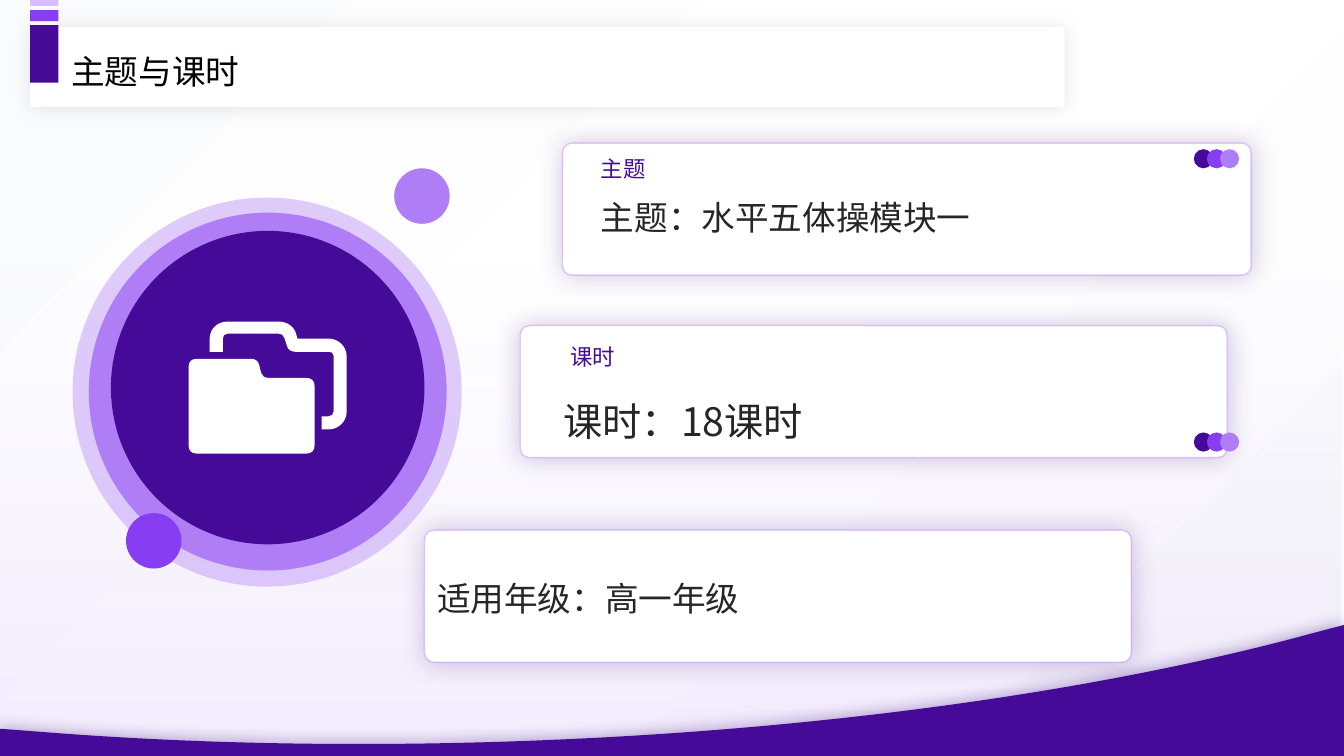
from dataclasses import dataclass
from math import cos, radians, sin
from lxml.etree import SubElement
from pptx import Presentation
from pptx.dml.color import RGBColor
from pptx.enum.shapes import MSO_SHAPE
from pptx.enum.text import MSO_ANCHOR, PP_ALIGN
from pptx.oxml.ns import qn
from pptx.util import Pt

PX = 9144  # 100 px to the inch
WIDE, HIGH = 1333, 750


@dataclass(frozen=True)
class Theme:
    deep: str = "450B98"
    vivid: str = "873DF1"
    soft: str = "AF7EF6"
    pale: str = "D7BEFA"
    shade: str = "340872"
    white: str = "FFFFFF"
    mist: str = "FAFBFC"
    black: str = "000000"
    ink: str = "262626"
    font: str = "Noto Sans CJK SC"
    label: int = 16
    body: int = 24
    large: int = 28


T = Theme()

# Outlines: a pair is a line to a point, six numbers are a curve
WAVE = [(1333, 0), (1333, 130), (0, 130), (0, 103), (52, 107),
        (222, 120, 412, 122, 609, 111), (876, 96, 1115, 59, 1299, 9)]
FRONT = [(8, 0), (62, 0), (66, 0, 69, 2, 70, 6), (72, 14),
         (73, 17, 75, 19, 80, 19), (117, 19), (122, 19, 125, 22, 125, 27),
         (125, 86), (125, 91, 122, 94, 117, 94), (8, 94),
         (3, 94, 0, 91, 0, 86), (0, 8), (0, 3, 3, 0, 8, 0)]
BACK = [(0, 30), (0, 17), (0, 7, 8, 0, 18, 0), (68, 0),
        (77, 0, 84, 5, 86, 13), (87, 17), (118, 17),
        (128, 17, 136, 25, 136, 35), (136, 89),
        (136, 99, 128, 107, 118, 107), (111, 107), (111, 94), (118, 94),
        (121, 94, 123, 92, 123, 89), (123, 34), (123, 31, 121, 30, 118, 30),
        (85, 30), (81, 30, 78, 28, 77, 25), (74, 16),
        (73, 13, 71, 12, 68, 12), (18, 12), (15, 12, 13, 14, 13, 17), (13, 30)]


def paint(shape, color, alpha=100):
    shape.shadow.inherit = False
    shape.line.fill.background()
    shape.fill.solid()
    shape.fill.fore_color.rgb = RGBColor.from_string(color)
    if alpha < 100:
        tint = shape.element.xpath("./p:spPr/a:solidFill/a:srgbClr")[0]
        SubElement(tint, qn("a:alpha"), val=str(alpha * 1000))


def blend(fill, root, stops, angle):
    fill.gradient()
    fill.gradient_angle = 360 - angle
    group = root.xpath(".//a:gsLst")[0]
    for old in list(group):
        group.remove(old)
    for pos, color, alpha in stops:
        stop = SubElement(group, qn("a:gs"), pos=str(pos * 1000))
        tint = SubElement(stop, qn("a:srgbClr"), val=color)
        SubElement(tint, qn("a:alpha"), val=str(alpha * 1000))


def glow(shape, color, alpha, blur, dist=0, angle=0):
    effects = shape.element.xpath("./p:spPr/a:effectLst")[0]
    outer = SubElement(effects, qn("a:outerShdw"), blurRad=str(Pt(blur)),
                       dist=str(Pt(dist)), dir=str(angle * 60000),
                       algn="ctr", rotWithShape="0")
    tint = SubElement(outer, qn("a:srgbClr"), val=color)
    SubElement(tint, qn("a:alpha"), val=str(alpha * 1000))


def block(slide, kind, box, color, alpha=100):
    shape = slide.shapes.add_shape(kind, *(n * PX for n in box))
    paint(shape, color, alpha)
    return shape


def disc(slide, x, y, size, color, alpha=100):
    block(slide, MSO_SHAPE.OVAL, (x, y, size, size), color, alpha)


def trace(slide, x, y, path, color, turn=0, hub=(0, 0)):
    c, s = cos(radians(turn)), sin(radians(turn))

    def spot(px, py):
        dx, dy = px - hub[0], py - hub[1]
        return (round((x + hub[0] + c * dx + s * dy) * PX),
                round((y + hub[1] + c * dy - s * dx) * PX))

    steps = [[spot(*step[i:i + 2]) for i in range(0, len(step), 2)] for step in path]
    pen = slide.shapes.build_freeform(*steps[0][0], scale=1)
    pen.add_line_segments([step[-1] for step in steps[1:]], close=True)
    shape = pen.convert_to_shape()
    # Turn the marked lines into curves
    lines = shape.element.xpath(".//a:path/a:lnTo")
    for line, step in zip(lines, steps[1:]):
        if len(step) == 3:
            curve = line.getparent().makeelement(qn("a:cubicBezTo"), {})
            for px, py in step:
                SubElement(curve, qn("a:pt"), x=str(px - shape.left),
                           y=str(py - shape.top))
            line.getparent().replace(line, curve)
    shape.rotation = turn
    paint(shape, color)
    return shape


def write(shape, text, size, color, space, anchor=MSO_ANCHOR.TOP):
    frame = shape.text_frame
    frame.word_wrap = True
    frame.vertical_anchor = anchor
    line = frame.paragraphs[0]
    line.text = text
    line.alignment = PP_ALIGN.LEFT
    line.line_spacing = space
    line.font.size = Pt(size)
    line.font.color.rgb = RGBColor.from_string(color)
    line.font.name = T.font
    SubElement(shape.element.xpath(".//a:defRPr")[0], qn("a:ea"), typeface=T.font)


def note(slide, box, text, size, color, space, anchor=MSO_ANCHOR.TOP, inset=True):
    shape = slide.shapes.add_textbox(*(n * PX for n in box))
    write(shape, text, size, color, space, anchor)
    if not inset:
        frame = shape.text_frame
        frame.margin_left = frame.margin_right = 0
        frame.margin_top = frame.margin_bottom = 0


def backdrop(slide, x, y, w, h):
    blend(slide.background.fill, slide.element,
          [(0, T.mist, 100), (50, T.white, 100), (97, T.mist, 100)], 45)
    veil = block(slide, MSO_SHAPE.RECTANGLE, (x - 2, y, w, h), T.white)
    blend(veil.fill, veil.element, [(35, T.pale, 0), (100, T.soft, 15)], 90)
    wave = trace(slide, x, y + h - 130, WAVE, T.deep, 3.7, (670, 65))
    glow(wave, T.shade, 40, 12, 2, 225)


def emblem(slide, x, y, size):
    # Rings
    disc(slide, x, y, size, T.soft, 39)
    disc(slide, x + 16, y + 15, size - 31, T.soft)
    disc(slide, x + 38, y + 33, size - 75, T.deep)
    # Folders
    trace(slide, x + 115, y + 160, FRONT, T.white)
    trace(slide, x + 136, y + 123, BACK, T.white)
    # Satellites
    disc(slide, x + 319, y - 29, 55, T.soft)
    disc(slide, x + 53, y + 313, 55, T.vivid)


def card(slide, x, y, w, h):
    shape = block(slide, MSO_SHAPE.ROUNDED_RECTANGLE, (x, y, w, h), T.white)
    shape.adjustments[0] = 0.07
    shape.line.color.rgb = RGBColor.from_string(T.soft)
    shape.line.width = Pt(1)
    line = shape.element.xpath("./p:spPr/a:ln//a:srgbClr")[0]
    SubElement(line, qn("a:alpha"), val="40000")
    glow(shape, T.shade, 24, 19)
    return shape


def topic(slide, box, title, label, text, body, size, dots):
    x, y, w, h = box
    card(slide, *box)
    note(slide, (x + body[0], y + body[1], *body[2:]), text, size, T.ink, 1.5,
         inset=False)
    note(slide, (x + label[0], y + label[1], 589, 32), title, T.label, T.deep,
         1.3, MSO_ANCHOR.MIDDLE, False)
    for i, color in enumerate((T.deep, T.vivid, T.soft)):
        disc(slide, x + dots[0] + 13 * i, y + dots[1], 19, color)


def header(slide, x, y, w, h):
    bar = block(slide, MSO_SHAPE.RECTANGLE, (x, y, w, h), T.white)
    glow(bar, T.black, 10, 13)
    note(slide, (x + 31, y + 15, 882, 50), "主题与课时", T.body, T.black, 1.1)
    # Ribbon
    for top, tall, color in ((-2, 57, T.deep), (-17, 11, T.vivid), (-27, 6, T.pale)):
        block(slide, MSO_SHAPE.RECTANGLE, (x, y + top, 28, tall), color)


def main():
    deck = Presentation()
    deck.slide_width, deck.slide_height = WIDE * PX, HIGH * PX
    slide = deck.slides.add_slide(deck.slide_layouts[6])
    backdrop(slide, 0, 0, WIDE, HIGH)
    emblem(slide, 72, 196, 386)
    topic(slide, (558, 142, 683, 131), "主题", (38, 5), "主题：水平五体操模块一",
          (38, 33, 645, 181), T.body, (626, 6))
    topic(slide, (516, 323, 701, 131), "课时", (50, 11), "课时：18课时",
          (43, 48, 619, 35), T.large, (668, 106))
    grade = card(slide, 421, 526, 701, 131)
    write(grade, "适用年级：高一年级", T.body, T.ink, 1.1, MSO_ANCHOR.MIDDLE)
    header(slide, 30, 27, 1026, 79)
    deck.save("out.pptx")


if __name__ == "__main__":
    main()
